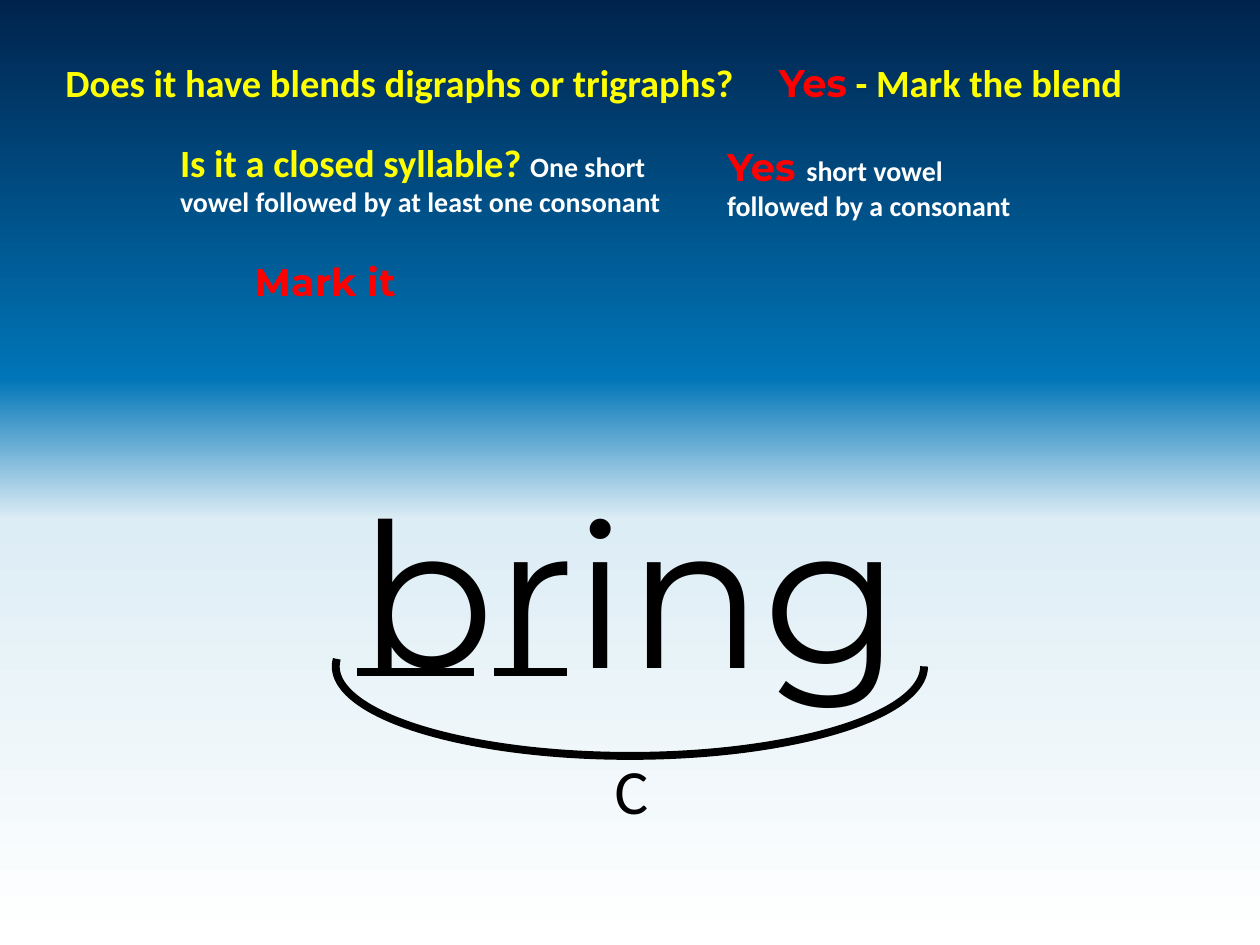
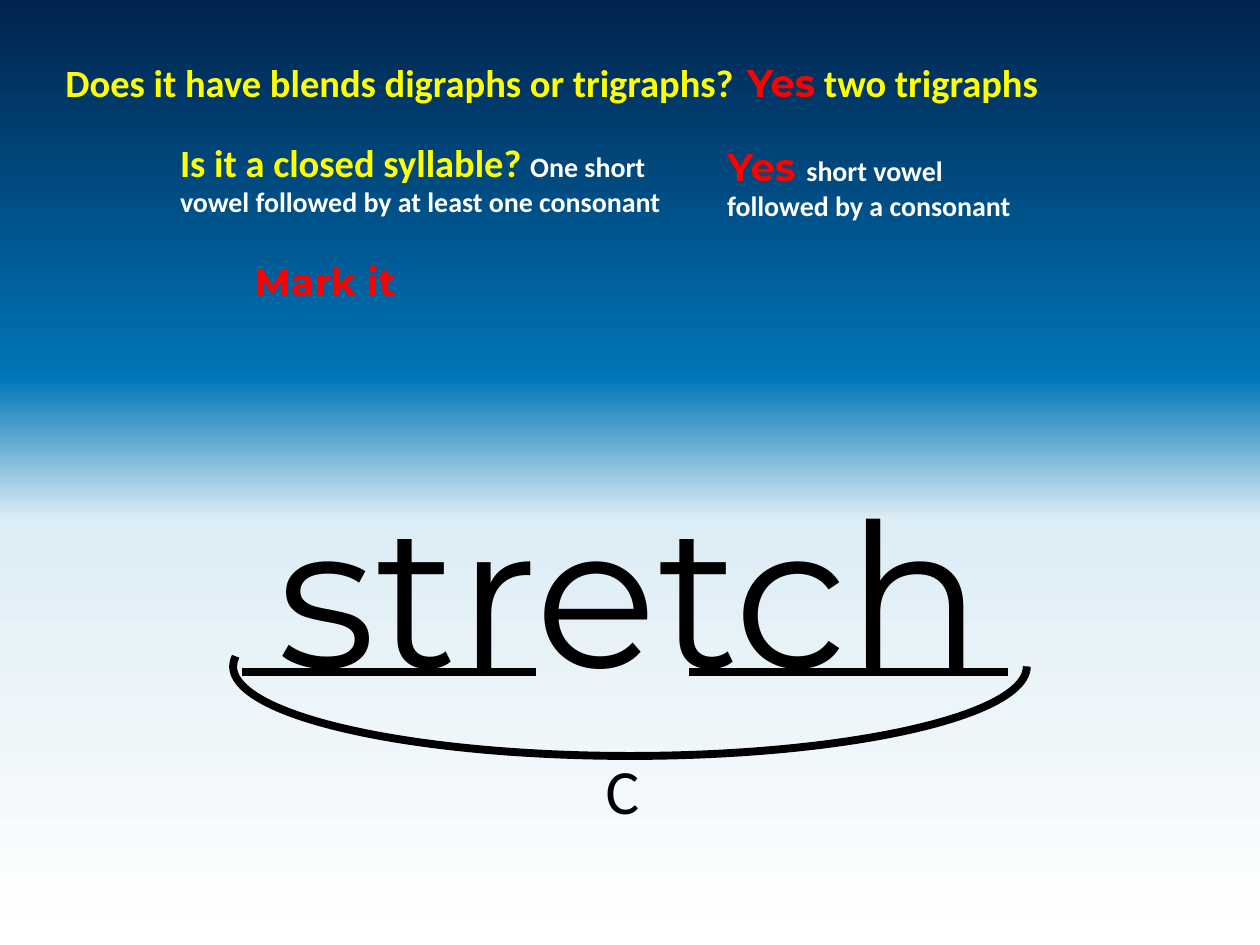
from dataclasses import dataclass

import pptx
import pptx.dml.color
import pptx.enum.shapes
import pptx.enum.text
import pptx.oxml
import pptx.oxml.ns
import pptx.util
from lxml import etree
from pptx.util import Cm


@dataclass(frozen=True)
class Style:
    name: str
    size: int
    color: str
    bold: bool = True


@dataclass(frozen=True)
class Theme:
    ink: str = "000000"
    stroke: float = 4.5
    # Position in percent, counted from the foot of the slide
    sky: tuple = ((0, "FFFFFF"), (45, "DDEDF5"), (60, "0075B7"), (100, "00234D"))
    question: Style = Style("Calibri", 22, "FFFF00")
    answer: Style = Style("Montserrat", 22, "FF0000")
    detail: Style = Style("Calibri", 16, "FFFFFF")
    word: Style = Style("Montserrat", 115, "000000", False)
    code: Style = Style("Calibri", 36, "000000", False)


@dataclass(frozen=True)
class Box:
    """A region of the slide, in centimetres."""
    left: float
    top: float
    width: float
    height: float

    def inner(self, left, top, width, height):
        return Box(self.left + left, self.top + top, width, height)

    def lengths(self):
        return Cm(self.left), Cm(self.top), Cm(self.width), Cm(self.height)


@dataclass(frozen=True)
class Lesson:
    word: str
    blend_answer: str
    answer_left: float
    answer_width: float
    arc_width: float
    code_left: float
    code_width: float
    underlines: tuple


THEME = Theme()
QUESTIONS = Box(1.07, 1.07, 23, 5.2)
WORD = Box(1.27, 6.55, 22.86, 10.59)
LINE_HEIGHT = 1.19
TWO_LINES = 1.88

LESSONS = (
    Lesson("bring", " - Mark the blend", 14.38, 7.67, 11.86, 10.87, 1.42,
           ((5.92, 8.28), (8.69, 10.16))),
    Lesson("stretch", " two trigraphs", 13.74, 6.58, 16, 10.69, 1.93,
           ((12.62, 18.49), (3.61, 9.53), (16.71, 19.05))),
)


def rgb(color):
    return pptx.dml.color.RGBColor.from_string(color)


def set_font(font, style, fields):
    for field in fields:
        if field == "color":
            font.color.rgb = rgb(style.color)
        elif field == "size":
            font.size = pptx.util.Pt(style.size)
        else:
            setattr(font, field, getattr(style, field))


def write(paragraph, parts):
    """Add (text, style) parts; what all styles share goes on the paragraph."""
    fields = ("name", "size", "color", "bold")
    shared = [field for field in fields
              if len({getattr(style, field) for _, style in parts}) == 1]
    varying = [field for field in fields if field not in shared]
    set_font(paragraph.font, parts[0][1], shared)
    for text, style in parts:
        for number, line in enumerate(text.split("\n")):
            if number:
                paragraph.add_line_break()
            run = paragraph.add_run()
            run.text = line
            set_font(run.font, style, varying)


def add_label(shapes, box, *parts):
    frame = shapes.add_textbox(*box.lengths()).text_frame
    frame.word_wrap = False
    frame.auto_size = pptx.enum.text.MSO_AUTO_SIZE.SHAPE_TO_FIT_TEXT
    write(frame.paragraphs[0], parts)


def draw_stroke(line):
    line.color.rgb = rgb(THEME.ink)
    line.width = pptx.util.Pt(THEME.stroke)


def paint_sky(master):
    fill = master.background.fill
    fill.gradient()
    fill.gradient_angle = 90
    qn = pptx.oxml.ns.qn
    stops = next(master.element.cSld.iter(qn("a:gsLst")))
    for stop in list(stops):
        stops.remove(stop)
    for percent, color in THEME.sky:
        stop = etree.SubElement(stops, qn("a:gs"), pos=str(percent * 1000))
        etree.SubElement(stop, qn("a:srgbClr"), val=color)


def add_questions(slide, box, lesson):
    shapes = slide.shapes
    add_label(shapes, box.inner(0, 0, 14.15, LINE_HEIGHT),
              ("Does it have blends digraphs or trigraphs?", THEME.question))
    add_label(shapes, box.inner(lesson.answer_left, 0, lesson.answer_width, LINE_HEIGHT),
              ("Yes", THEME.answer), (lesson.blend_answer, THEME.question))
    add_label(shapes, box.inner(2.31, 1.6, 10.31, TWO_LINES),
              ("Is it a closed syllable? ", THEME.question),
              ("One short \nvowel followed by at least one consonant", THEME.detail))
    add_label(shapes, box.inner(13.34, 1.68, 6.3, TWO_LINES),
              ("Yes ", THEME.answer),
              ("short vowel \nfollowed by a consonant", THEME.detail))
    add_label(shapes, box.inner(3.81, 4.01, 3.81, LINE_HEIGHT),
              ("Mark it", THEME.answer))


def add_word(slide, box, word):
    frame = slide.shapes.add_textbox(*box.lengths()).text_frame
    frame.word_wrap = True
    frame.vertical_anchor = pptx.enum.text.MSO_ANCHOR.MIDDLE
    frame.paragraphs[0].alignment = pptx.enum.text.PP_ALIGN.CENTER
    write(frame.paragraphs[0], [(word, THEME.word)])


def add_syllable_mark(slide, box, lesson):
    """Draw the arc below the word and the syllable code under it."""
    shapes = slide.shapes.add_group_shape().shapes
    arc_left = (box.width - lesson.arc_width) / 2
    arc = shapes.add_shape(pptx.enum.shapes.MSO_SHAPE.ARC,
                           *box.inner(arc_left, 5.08, lesson.arc_width, 3.61).lengths())
    arc.adjustments[0] = 107.12
    arc.adjustments[1] = 0
    arc.element.spPr.find(pptx.oxml.ns.qn("a:xfrm")).set("flipV", "1")
    arc.shadow.inherit = False
    arc.fill.background()
    draw_stroke(arc.line)
    add_label(shapes, box.inner(lesson.code_left, 8.48, lesson.code_width, 1.8),
              ("C", THEME.code))


def add_underlines(slide, box, underlines):
    shapes = slide.shapes.add_group_shape().shapes
    baseline = Cm(box.top + 7)
    for start, end in underlines:
        underline = shapes.add_connector(
            pptx.enum.shapes.MSO_CONNECTOR.STRAIGHT,
            Cm(box.left + start), baseline, Cm(box.left + end), baseline)
        draw_stroke(underline.line)
        etree.SubElement(underline.element.spPr, pptx.oxml.ns.qn("a:effectLst"))


def add_lesson(presentation, lesson):
    slide = presentation.slides.add_slide(presentation.slide_layouts[6])
    add_word(slide, WORD, lesson.word)
    add_questions(slide, QUESTIONS, lesson)
    add_syllable_mark(slide, WORD, lesson)
    add_underlines(slide, WORD, lesson.underlines)


def main():
    presentation = pptx.Presentation()
    presentation.slide_width = Cm(25.4)
    presentation.slide_height = Cm(19.05)
    paint_sky(presentation.slide_master)
    for lesson in LESSONS:
        add_lesson(presentation, lesson)
    presentation.save("out.pptx")


if __name__ == "__main__":
    main()
